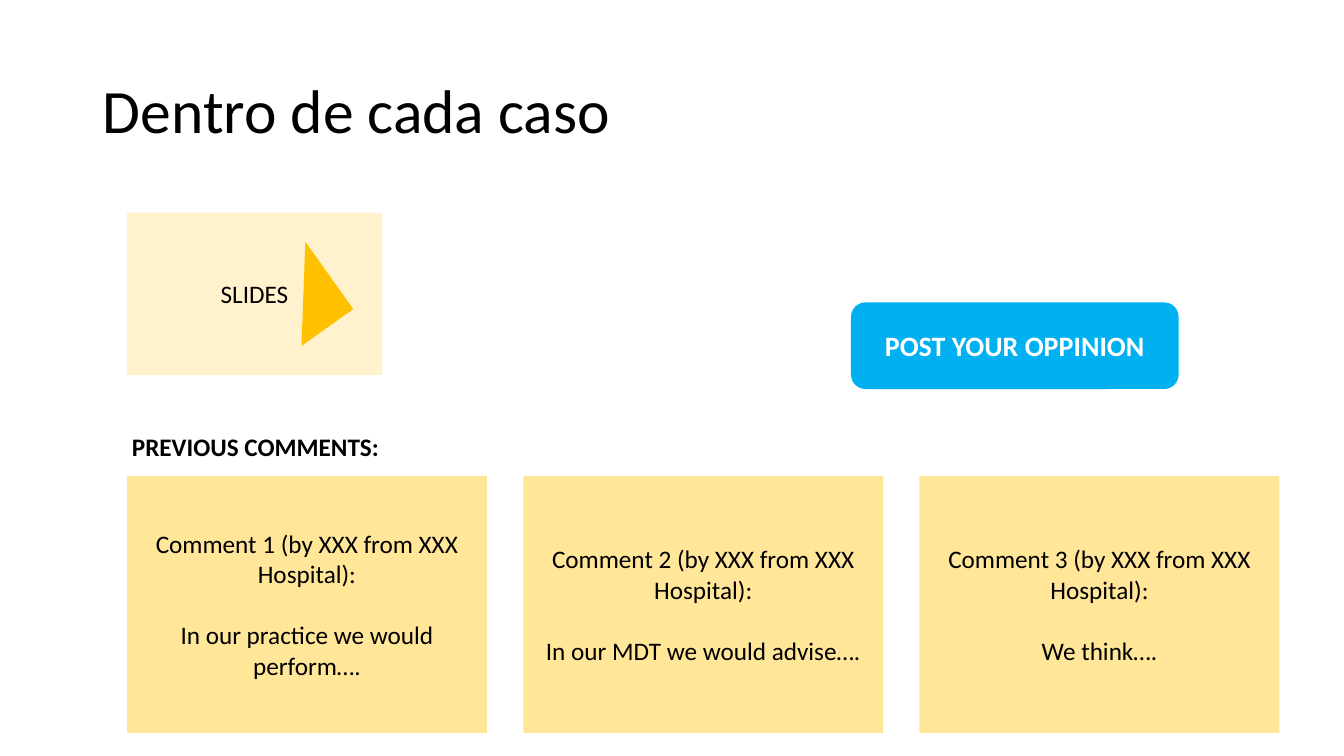
import pptx
import pptx.dml.color
import pptx.enum.shapes
import pptx.enum.text
import pptx.util
from pptx.util import Inches

COLORS = {
    "text": "000000",
    "button_text": "FFFFFF",
    "button": "00B0F0",
    "slides_box": "FFF2CC",
    "comment": "FFE699",
    "arrow": "FFC000",
}
SHAPES = pptx.enum.shapes.MSO_SHAPE
ALIGN = pptx.enum.text.PP_ALIGN
MIDDLE = pptx.enum.text.MSO_ANCHOR.MIDDLE


def rgb(name):
    return pptx.dml.color.RGBColor.from_string(COLORS[name])


class CaseSlide:
    font = "Calibri"
    body_size = 18
    paragraph_gap = 22

    def __init__(self, presentation):
        self.slide = presentation.slides.add_slide(presentation.slide_layouts[5])

    def set_text(self, frame, paragraphs, size=body_size, color="text", bold=False,
                 align=ALIGN.CENTER):
        """Fill the frame, leaving one line of space between paragraphs."""
        frame.text = "\n".join(paragraphs)
        for index, paragraph in enumerate(frame.paragraphs):
            paragraph.alignment = align
            if index:
                paragraph.space_before = pptx.util.Pt(self.paragraph_gap)
            for run in paragraph.runs:
                run.font.name = self.font
                run.font.size = pptx.util.Pt(size)
                run.font.bold = bold
                run.font.color.rgb = rgb(color)

    def title(self, text, left, top, width, height):
        heading = self.slide.shapes.title
        heading.left, heading.top = Inches(left), Inches(top)
        heading.width, heading.height = Inches(width), Inches(height)
        frame = heading.text_frame
        self.set_text(frame, [text], size=44, align=ALIGN.LEFT)
        frame.vertical_anchor = MIDDLE
        frame.paragraphs[0].line_spacing = 0.9

    def shape(self, kind, left, top, width, height, fill, rotation=0):
        block = self.slide.shapes.add_shape(
            kind, Inches(left), Inches(top), Inches(width), Inches(height))
        block.shadow.inherit = False
        block.fill.solid()
        block.fill.fore_color.rgb = rgb(fill)
        block.line.fill.background()
        block.rotation = rotation
        return block

    def box(self, paragraphs, left, top, width, height, fill,
            kind=SHAPES.RECTANGLE, **style):
        frame = self.shape(kind, left, top, width, height, fill).text_frame
        frame.word_wrap = True
        frame.vertical_anchor = MIDDLE
        self.set_text(frame, paragraphs, **style)

    def label(self, text, left, top, width, height):
        caption = self.slide.shapes.add_textbox(
            Inches(left), Inches(top), Inches(width), Inches(height))
        caption.text_frame.word_wrap = False
        self.set_text(caption.text_frame, [text], bold=True, align=ALIGN.LEFT)


def main():
    presentation = pptx.Presentation()
    presentation.slide_width = Inches(13.33)
    presentation.slide_height = Inches(7.5)

    case = CaseSlide(presentation)
    case.title("Dentro de cada caso", 0.92, 0.4, 11.5, 1.45)
    case.box(["SLIDES"], 1.26, 2.11, 2.53, 1.61, "slides_box")

    opinions = [
        "In our practice we would perform….",
        "In our MDT we would advise….",
        "We think….",
    ]
    for index, opinion in enumerate(opinions):
        author = f"Comment {index + 1} (by XXX from XXX Hospital):"
        case.box([author, opinion], 1.26 + 3.93 * index, 4.72, 3.57, 2.55, "comment")

    case.shape(SHAPES.RIGHT_TRIANGLE, 2.6, 2.6, 0.82, 0.63, "arrow", rotation=234.6)
    case.box(["POST YOUR OPPINION"], 8.44, 3, 3.25, 0.86, "button",
             kind=SHAPES.ROUNDED_RECTANGLE, size=20, color="button_text", bold=True)
    case.label("PREVIOUS COMMENTS:", 1.21, 4.23, 2.67, 0.4)

    presentation.save("out.pptx")


if __name__ == "__main__":
    main()
